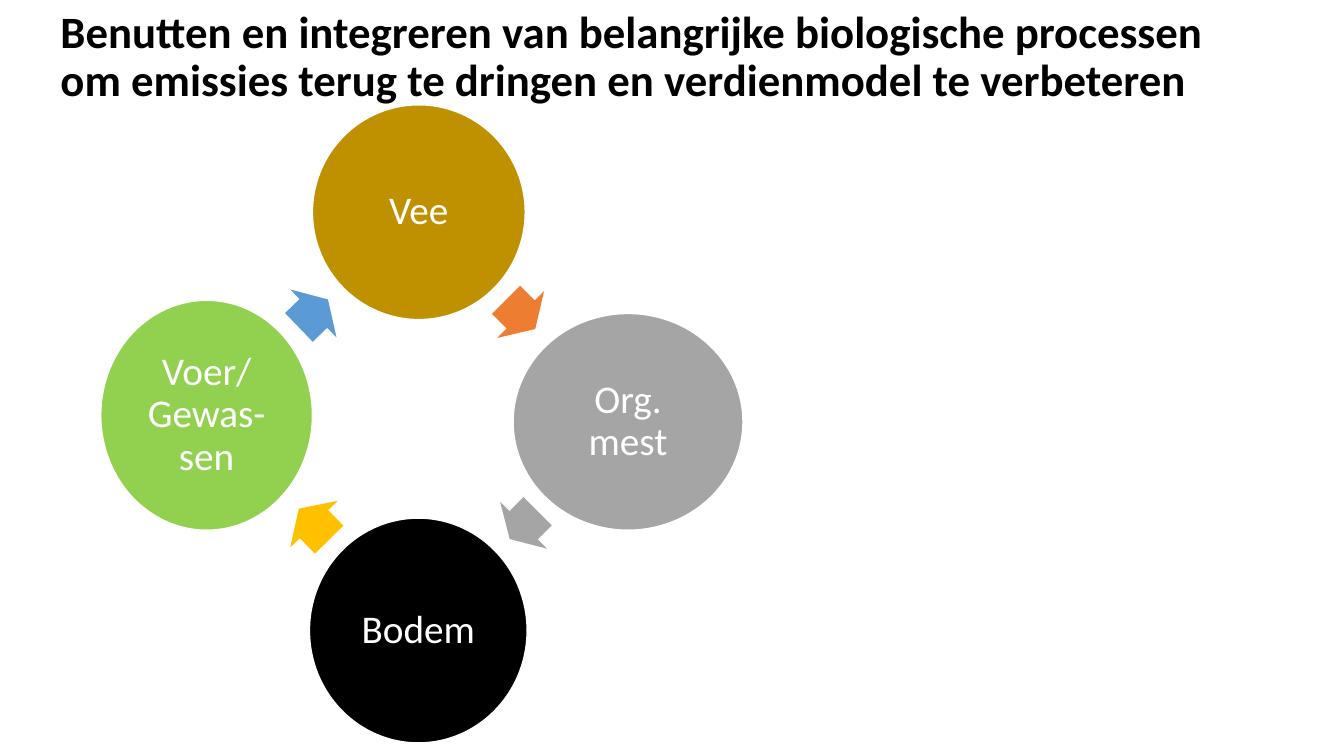
from dataclasses import dataclass

import pptx
import pptx.dml.color
import pptx.enum.shapes
import pptx.enum.text
import pptx.util
from pptx.enum.shapes import MSO_SHAPE
from pptx.enum.text import MSO_ANCHOR, PP_ALIGN

Pt = pptx.util.Pt


@dataclass(frozen=True)
class Theme:
    font: str = "Calibri"
    title_size: float = 32
    label_size: float = 28
    line_spacing: float = 0.9
    black: str = "000000"
    white: str = "FFFFFF"
    ochre: str = "BF9000"
    grey: str = "A5A5A5"
    green: str = "92D050"
    orange: str = "ED7D31"
    yellow: str = "FFC000"
    blue: str = "5B9BD5"


@dataclass(frozen=True)
class Stage:
    label: str
    center_x: float
    center_y: float
    width: float
    height: float
    color: str


@dataclass(frozen=True)
class CycleArrow:
    center_x: float
    center_y: float
    width: float
    rotation: float
    color: str


THEME = Theme()
TITLE = (
    "Benutten en integreren van belangrijke biologische processen "
    "om emissies terug te dringen en verdienmodel te verbeteren"
)
ARROW_HEIGHT = 47.5
LABEL_INSET = 2.8

STAGES = [
    Stage("Vee", 299.2, 151.6, 152, 153.4, THEME.ochre),
    Stage("Org. mest", 448.6, 301.3, 164.2, 154.8, THEME.grey),
    Stage("Bodem", 298.8, 450.4, 155.5, 160.6, THEME.black),
    Stage("Voer/ Gewas-sen", 147.6, 296.6, 151.2, 164.2, THEME.green),
]
ARROWS = [
    CycleArrow(371.9, 224.6, 29.5, 45, THEME.orange),
    CycleArrow(374, 375.1, 28.1, 135, THEME.grey),
    CycleArrow(224.3, 374.4, 31, 225.5, THEME.yellow),
    CycleArrow(223.9, 223.9, 28.8, 316.1, THEME.blue),
]


def rgb(color: str) -> pptx.dml.color.RGBColor:
    return pptx.dml.color.RGBColor.from_string(color)


def write_text(shape, text: str, size: float, color: str, align: PP_ALIGN, bold: bool) -> None:
    frame = shape.text_frame
    frame.word_wrap = True
    frame.auto_size = pptx.enum.text.MSO_AUTO_SIZE.NONE
    frame.vertical_anchor = MSO_ANCHOR.MIDDLE
    para = frame.paragraphs[0]
    para.alignment = align
    para.line_spacing = THEME.line_spacing
    para.space_before = Pt(0)
    span = para.add_run()
    span.text = text
    span.font.name = THEME.font
    span.font.size = Pt(size)
    span.font.bold = bold
    span.font.color.rgb = rgb(color)


def add_centered(page, kind: MSO_SHAPE, center_x: float, center_y: float,
                 width: float, height: float, color: str):
    shape = page.shapes.add_shape(
        kind, Pt(center_x - width / 2), Pt(center_y - height / 2), Pt(width), Pt(height))
    shape.shadow.inherit = False
    shape.fill.solid()
    shape.fill.fore_color.rgb = rgb(color)
    return shape


def draw_stage(page, stage: Stage) -> None:
    circle = add_centered(page, MSO_SHAPE.OVAL, stage.center_x, stage.center_y,
                          stage.width, stage.height, stage.color)
    circle.line.color.rgb = rgb(THEME.white)
    circle.line.width = Pt(1)
    frame = circle.text_frame
    frame.margin_left = frame.margin_right = Pt(LABEL_INSET)
    frame.margin_top = frame.margin_bottom = Pt(LABEL_INSET)
    write_text(circle, stage.label, THEME.label_size, THEME.white, PP_ALIGN.CENTER, False)


def draw_arrow(page, arrow: CycleArrow) -> None:
    shape = add_centered(page, MSO_SHAPE.RIGHT_ARROW, arrow.center_x, arrow.center_y,
                         arrow.width, ARROW_HEIGHT, arrow.color)
    shape.line.fill.background()
    shape.adjustments[0] = 0.6
    shape.adjustments[1] = 0.5
    shape.rotation = arrow.rotation


def draw_title(page) -> None:
    title = page.shapes.title
    title.left, title.top = Pt(36), Pt(0)
    title.width, title.height = Pt(876.2), Pt(82.8)
    write_text(title, TITLE, THEME.title_size, THEME.black, PP_ALIGN.LEFT, True)


def main() -> None:
    deck = pptx.Presentation()
    deck.slide_width, deck.slide_height = Pt(960), Pt(540)
    page = deck.slides.add_slide(deck.slide_layouts[5])
    draw_title(page)
    for stage, arrow in zip(STAGES, ARROWS):
        draw_stage(page, stage)
        draw_arrow(page, arrow)
    deck.save("out.pptx")


if __name__ == "__main__":
    main()
